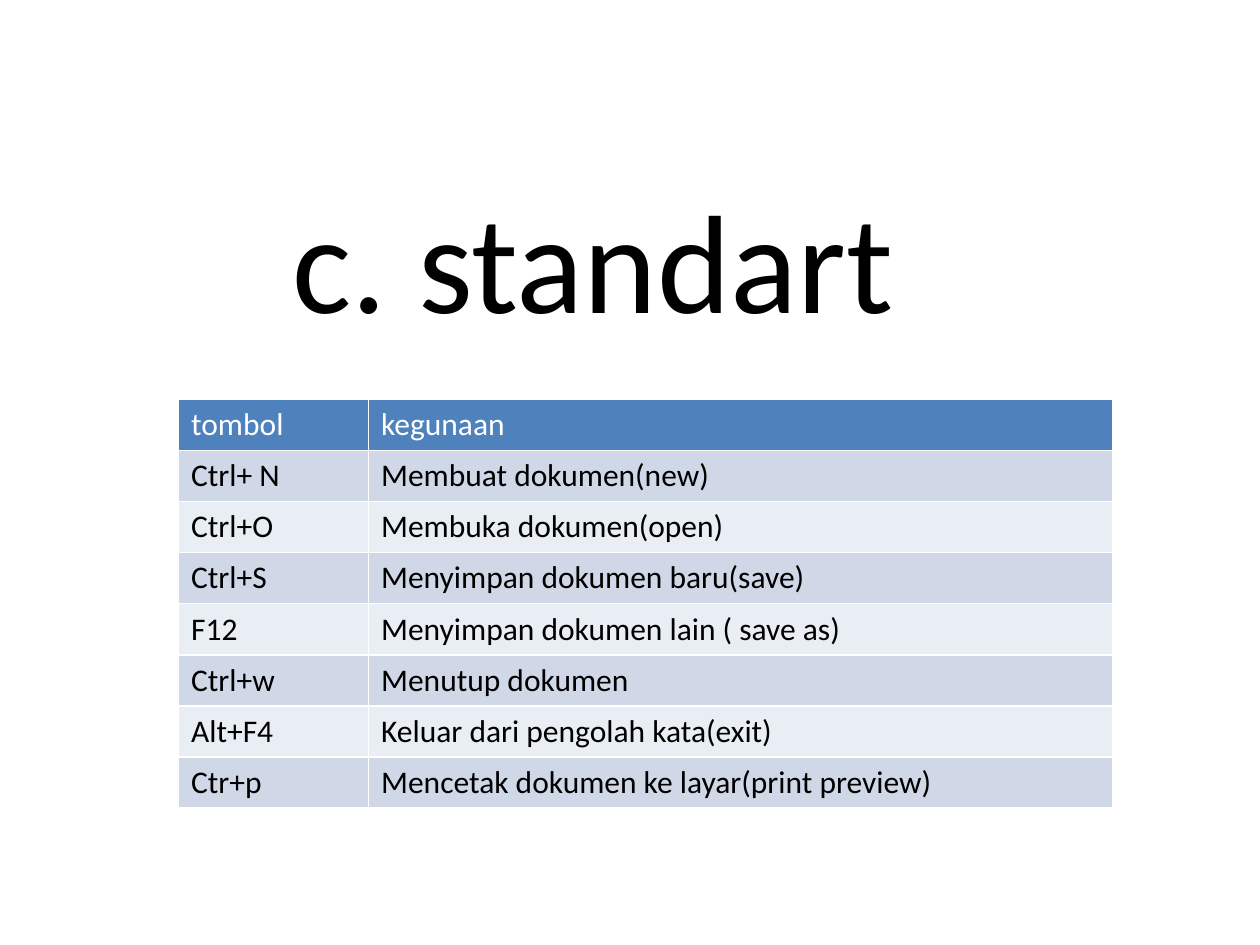
"""Build a slide with a table of standard keyboard shortcuts."""
from dataclasses import dataclass
from typing import NamedTuple

from pptx import Presentation as Deck
from pptx.dml.color import RGBColor as Rgb
from pptx.enum.text import MSO_ANCHOR as Anchor, PP_ALIGN as Align
from pptx.util import Cm, Pt


@dataclass(frozen=True)
class Theme:
    font: str = "Calibri"
    big: int = 80
    body: int = 18
    ink: str = "000000"
    pale: str = "FFFFFF"
    head: str = "4F81BD"
    bands: tuple[str, str] = ("D0D8E8", "E9EDF4")


class Box(NamedTuple):
    left: float
    top: float
    width: float
    height: float

    def cm(self) -> list[Cm]:
        return [Cm(side) for side in self]


class Key(NamedTuple):
    name: str
    use: str


THEME = Theme()
TITLE = Box(2.54, 2.96, 18.84, 4.45)
GRID = Box(3.6, 8.05, 18.84, 8.24)
COLS = (3.83, 15.01)
KEYS = (
    Key("tombol", "kegunaan"),
    Key("Ctrl+ N", "Membuat dokumen(new)"),
    Key("Ctrl+O", "Membuka dokumen(open)"),
    Key("Ctrl+S", "Menyimpan dokumen baru(save)"),
    Key("F12", "Menyimpan dokumen lain ( save as)"),
    Key("Ctrl+w", "Menutup dokumen"),
    Key("Alt+F4", "Keluar dari pengolah kata(exit)"),
    Key("Ctr+p", "Mencetak dokumen ke layar(print preview)"),
)


def style(frame, size: int, ink: str) -> None:
    for para in frame.paragraphs:
        for run in para.runs:
            font = run.font
            font.name, font.size, font.bold = THEME.font, Pt(size), False
            font.color.rgb = Rgb.from_string(ink)


def add_title(slide, text: str, box: Box) -> None:
    frame = slide.shapes.add_textbox(*box.cm()).text_frame
    frame.word_wrap = True
    frame.vertical_anchor = Anchor.MIDDLE
    frame.text = text
    frame.paragraphs[0].alignment = Align.CENTER
    style(frame, THEME.big, THEME.ink)


def add_keys(slide, keys: tuple[Key, ...], box: Box) -> None:
    table = slide.shapes.add_table(len(keys), len(COLS), *box.cm()).table
    for col, width in zip(table.columns, COLS):
        col.width = Cm(width)
    for row, key in enumerate(keys):
        fill = THEME.bands[(row - 1) % 2] if row else THEME.head
        ink = THEME.ink if row else THEME.pale
        for cell, text in zip(table.rows[row].cells, key):
            cell.text_frame.text = text
            cell.fill.solid()
            cell.fill.fore_color.rgb = Rgb.from_string(fill)
            style(cell.text_frame, THEME.body, ink)


def main() -> None:
    deck = Deck()
    deck.slide_width, deck.slide_height = Cm(25.4), Cm(19.05)
    slide = deck.slides.add_slide(deck.slide_layouts[6])
    add_title(slide, "c. standart", TITLE)
    add_keys(slide, KEYS, GRID)
    deck.save("out.pptx")


if __name__ == "__main__":
    main()
